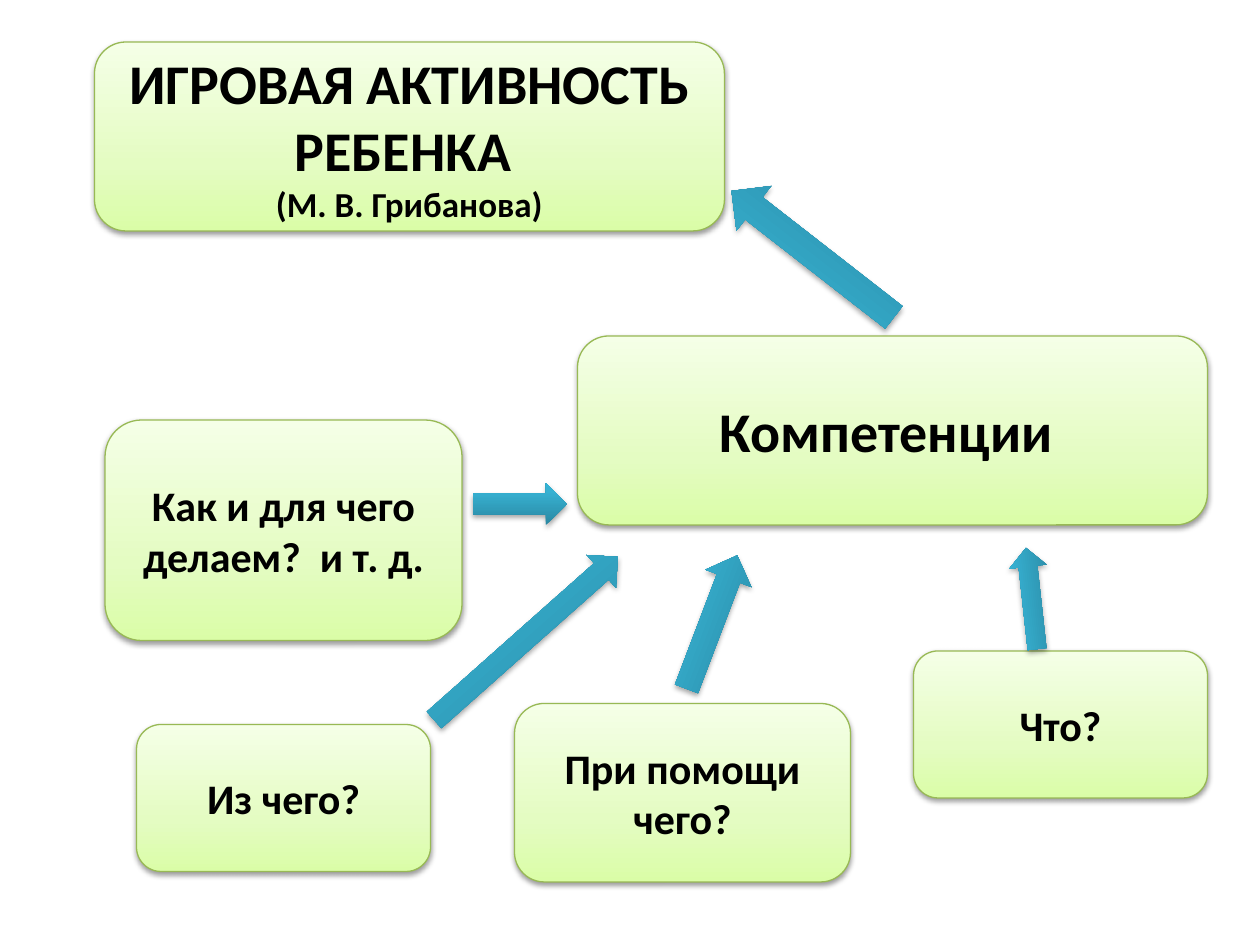
from lxml.etree import SubElement
from pptx import Presentation
from pptx.dml.color import RGBColor
from pptx.enum.shapes import MSO_SHAPE as Preset
from pptx.enum.text import MSO_ANCHOR as Anchor, PP_ALIGN as Align
from pptx.oxml import parse_xml
from pptx.oxml.ns import nsdecls, qn
from pptx.util import Emu, Pt

PX = 7620  # EMU in one px, 120 px to the inch
COLORS = {
    "text": "000000",
    "border": "98B955",
    "shadow": "000000",
    "green_dark": "DAFDA7",
    "green_mid": "E4FCC2",
    "green_light": "F5FFE7",
    "blue_dark": "2A88A2",
    "blue_mid": "37B1D2",
    "blue_light": "34B4D6",
}
GREEN = [(0, "green_dark"), (35, "green_mid"), (100, "green_light")]
BLUE = [(0, "blue_dark"), (80, "blue_mid"), (100, "blue_light")]


class Diagram:
    font_name = "Calibri"

    def __init__(self, page):
        self.page = page

    def shape(self, preset, frame, stops, shadow_alpha, shadow_distance):
        """Add a preset shape with an upward gradient and a soft shadow below."""
        shape = self.page.shapes.add_shape(preset, *(Emu(n * PX) for n in frame))
        shape.line.fill.background()
        properties = shape._element.spPr
        gradient = parse_xml(f'<a:gradFill rotWithShape="1" {nsdecls("a")}/>')
        stop_list = SubElement(gradient, qn("a:gsLst"))
        for position, color in stops:
            stop = SubElement(stop_list, qn("a:gs"), pos=str(position * 1000))
            SubElement(stop, qn("a:srgbClr"), val=COLORS[color])
        SubElement(gradient, qn("a:lin"), ang="16200000", scaled="0")
        properties.find(qn("a:prstGeom")).addnext(gradient)

        effects = SubElement(properties, qn("a:effectLst"))
        shadow = SubElement(
            effects, qn("a:outerShdw"), blurRad=str(Pt(3.1)),
            dist=str(Pt(shadow_distance)), dir="5400000", rotWithShape="0")
        color = SubElement(shadow, qn("a:srgbClr"), val=COLORS["shadow"])
        SubElement(color, qn("a:alpha"), val=str(shadow_alpha * 1000))
        return shape

    def box(self, frame, *lines):
        """Add a green box; each line is a (text, point size) pair."""
        box = self.shape(Preset.ROUNDED_RECTANGLE, frame, GREEN, 38, 1.6)
        box.line.color.rgb = RGBColor.from_string(COLORS["border"])
        box.line.width = Pt(0.75)
        frame = box.text_frame
        frame.word_wrap = True
        frame.vertical_anchor = Anchor.MIDDLE
        for index, (text, size) in enumerate(lines):
            para = frame.add_paragraph() if index else frame.paragraphs[0]
            para.text = text
            para.alignment = Align.CENTER
            font = para.font
            font.name, font.size, font.bold = self.font_name, Pt(size), True
            font.color.rgb = RGBColor.from_string(COLORS["text"])

    def arrow(self, frame, rotation=0):
        arrow = self.shape(Preset.RIGHT_ARROW, frame, BLUE, 35, 1.8)
        arrow.rotation = rotation


def main():
    deck = Presentation()
    deck.slide_width, deck.slide_height = Emu(1200 * PX), Emu(900 * PX)
    diagram = Diagram(deck.slides.add_slide(deck.slide_layouts[6]))

    diagram.box((90, 40, 600, 180),
                ("ИГРОВАЯ АКТИВНОСТЬ РЕБЕНКА ", 32), ("(М. В. Грибанова)", 20))
    diagram.box((550, 320, 600, 180), ("Компетенции ", 32))
    questions = [
        ("Из чего?", (130, 690, 280, 140)),
        ("Что?", (870, 620, 280, 140)),
        ("При помощи чего?", (490, 670, 320, 170)),
        ("Как и для чего делаем?  и т. д.", (100, 400, 340, 210)),
    ]
    for text, frame in questions:
        diagram.box(frame, (text, 24))

    diagram.arrow((450, 460, 90, 40))
    diagram.arrow((676, 215, 196, 54), 217.9)
    diagram.arrow((384, 587, 234, 42), 318.4)
    diagram.arrow((610, 569, 136, 47), 290.8)
    diagram.arrow((934, 552, 97, 36), 263.7)
    deck.save("out.pptx")


if __name__ == "__main__":
    main()
